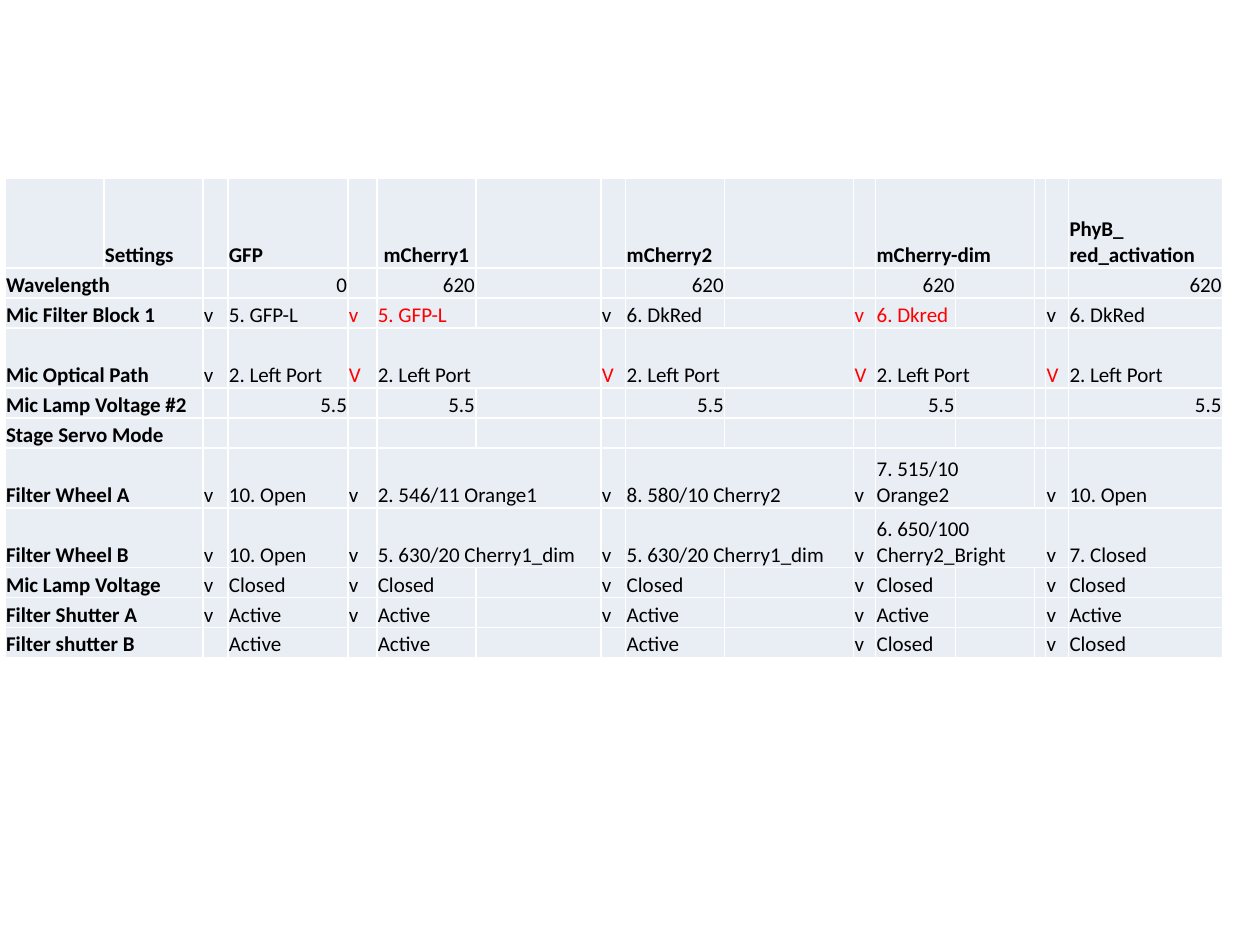
"""Build a slide with a table of microscope settings for each imaging channel."""
from dataclasses import dataclass, field
from typing import NamedTuple

from lxml import etree
from pptx import Presentation
from pptx import util as u
from pptx.dml.color import RGBColor
from pptx.enum import text
from pptx.oxml import ns

PX = u.Inches(1) / 126
COLOURS = {"cell": "E9EDF4", "border": "FFFFFF", "ink": "000000", "changed": "FF0000"}
FONT, FONT_SIZE = "Calibri", u.Pt(12)
COLUMN_WIDTHS = [99, 99, 25, 120, 29, 99, 125, 25, 99, 129, 22, 80, 79, 11, 23, 154]
TABLE_LEFT, TABLE_TOP = 5, 178
LINE_HEIGHT = 30
MARK_COLUMNS = [2, 4, 7, 10, 14]
VALUE_COLUMNS = [3, 5, 8, 11, 15]
LABEL_SPAN = {0: 2}
WIDE_VALUES = {5: 2, 8: 2, 11: 2}
LEFT, CENTRE, RIGHT = text.PP_ALIGN.LEFT, text.PP_ALIGN.CENTER, text.PP_ALIGN.RIGHT


class Channel(NamedTuple):
    name: str
    align: text.PP_ALIGN = LEFT


@dataclass
class Setting:
    label: str
    values: list[str]
    marks: str = "     "
    lines: int = 1
    numeric: bool = False
    spans: dict[int, int] = field(default_factory=dict)
    changed_marks: tuple[int, ...] = ()
    changed_values: tuple[int, ...] = ()


CHANNELS = [
    Channel("GFP"),
    Channel("mCherry1", CENTRE),
    Channel("mCherry2"),
    Channel("mCherry-dim"),
    Channel("PhyB_\nred_activation"),
]
SETTINGS = [
    Setting("Wavelength", ["0"] + ["620"] * 4, numeric=True),
    Setting("Mic Filter Block 1", ["5. GFP-L", "5. GFP-L", "6. DkRed", "6. Dkred", "6. DkRed"],
            "vvvvv", changed_marks=(1, 3), changed_values=(1, 3)),
    Setting("Mic Optical Path", ["2. Left Port"] * 5, "vVVVV", lines=2,
            spans=WIDE_VALUES, changed_marks=(1, 2, 3, 4)),
    Setting("Mic Lamp Voltage #2", ["5.5"] * 5, numeric=True),
    Setting("Stage Servo Mode", [""] * 5),
    Setting("Filter Wheel A",
            ["10. Open", "2. 546/11 Orange1", "8. 580/10 Cherry2", "7. 515/10 Orange2", "10. Open"],
            "vvvvv", lines=2, spans=WIDE_VALUES),
    Setting("Filter Wheel B",
            ["10. Open", "5. 630/20 Cherry1_dim", "5. 630/20 Cherry1_dim",
             "6. 650/100 Cherry2_Bright", "7. Closed"],
            "vvvvv", lines=2, spans={**WIDE_VALUES, 11: 3}),
    Setting("Mic Lamp Voltage", ["Closed"] * 5, "vvvvv"),
    Setting("Filter Shutter A", ["Active"] * 5, "vvvvv"),
    Setting("Filter shutter B", ["Active"] * 3 + ["Closed"] * 2, "   vv"),
]


def px(length: int) -> int:
    return round(length * PX)


def style_cell(cell) -> None:
    cell.margin_left = cell.margin_right = cell.margin_top = px(1)
    cell.margin_bottom = 0
    cell.vertical_anchor = text.MSO_ANCHOR.BOTTOM
    properties = cell._tc.get_or_add_tcPr()
    for side in ("lnL", "lnR", "lnT", "lnB"):
        border = etree.SubElement(properties, ns.qn(f"a:{side}"), w=str(u.Pt(1)))
        paint = etree.SubElement(border, ns.qn("a:solidFill"))
        etree.SubElement(paint, ns.qn("a:srgbClr"), val=COLOURS["border"])
    cell.fill.solid()
    cell.fill.fore_color.rgb = RGBColor.from_string(COLOURS["cell"])
    blank = cell.text_frame.paragraphs[0]._p
    etree.SubElement(blank, ns.qn("a:endParaRPr"), sz=str(int(FONT_SIZE.pt * 100)))


def write(cell, wording: str, *, bold: bool = False, colour: str = "ink",
          align: text.PP_ALIGN = LEFT) -> None:
    if not wording.strip():
        return
    cell.text = wording
    for paragraph in cell.text_frame.paragraphs:
        paragraph.alignment = align
        for run in paragraph.runs:
            run.font.name, run.font.size, run.font.bold = FONT, FONT_SIZE, bold
            run.font.color.rgb = RGBColor.from_string(COLOURS[colour])


def merge_across(table, row: int, spans: dict[int, int]) -> None:
    for column, span in spans.items():
        table.cell(row, column).merge(table.cell(row, column + span - 1))


def draw_header(table) -> None:
    merge_across(table, 0, {11: 2})
    write(table.cell(0, 1), "Settings", bold=True)
    for column, channel in zip(VALUE_COLUMNS, CHANNELS):
        write(table.cell(0, column), channel.name, bold=True, align=channel.align)


def draw_setting(table, row: int, setting: Setting) -> None:
    merge_across(table, row, LABEL_SPAN | setting.spans)
    write(table.cell(row, 0), setting.label, bold=True)
    for index, (mark, value) in enumerate(zip(setting.marks, setting.values)):
        write(table.cell(row, MARK_COLUMNS[index]), mark,
              colour="changed" if index in setting.changed_marks else "ink")
        write(table.cell(row, VALUE_COLUMNS[index]), value,
              colour="changed" if index in setting.changed_values else "ink",
              align=RIGHT if setting.numeric else LEFT)


def main() -> None:
    deck = Presentation()
    deck.slide_width, deck.slide_height = u.Inches(10), u.Inches(7.5)
    slide = deck.slides.add_slide(deck.slide_layouts[6])
    heights = [LINE_HEIGHT * lines for lines in [3] + [setting.lines for setting in SETTINGS]]
    table = slide.shapes.add_table(
        len(heights), len(COLUMN_WIDTHS), px(TABLE_LEFT), px(TABLE_TOP),
        px(sum(COLUMN_WIDTHS)), px(sum(heights))).table
    table.first_row = table.horz_banding = False
    for column, width in zip(table.columns, COLUMN_WIDTHS):
        column.width = px(width)
    for row, height in zip(table.rows, heights):
        row.height = px(height)
    for cell in table.iter_cells():
        style_cell(cell)
    draw_header(table)
    for row, setting in enumerate(SETTINGS, start=1):
        draw_setting(table, row, setting)
    deck.save("out.pptx")


if __name__ == "__main__":
    main()
